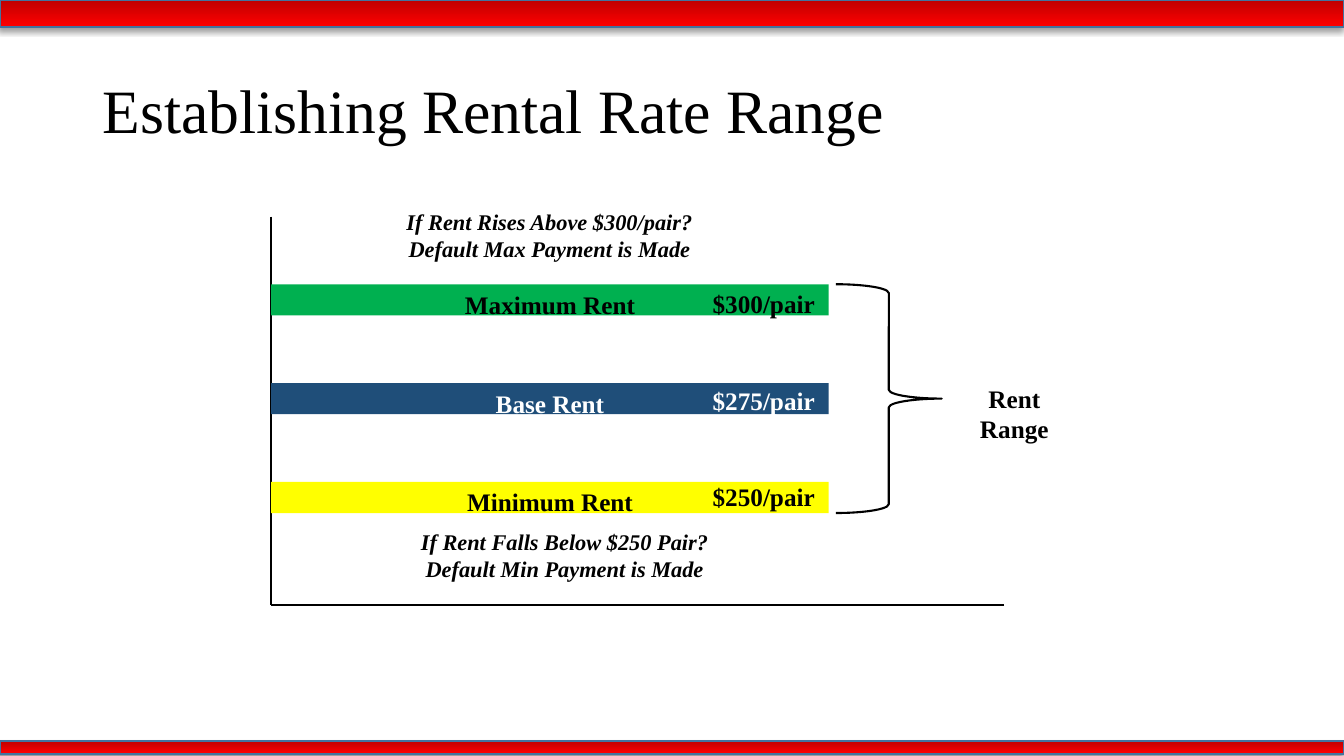
"""Build the rental rate range slide."""
from dataclasses import dataclass

from lxml.etree import SubElement
from pptx import Presentation
from pptx.dml.color import RGBColor
from pptx.enum.shapes import MSO_CONNECTOR, MSO_SHAPE
from pptx.enum.text import MSO_ANCHOR, PP_ALIGN
from pptx.oxml.ns import qn
from pptx.util import Inches, Pt


@dataclass(frozen=True)
class Theme:
    """Colours, font and type sizes of the slide."""
    font: str = "Times New Roman"
    black: str = "000000"
    white: str = "FFFFFF"
    dark_red: str = "C00000"
    red: str = "FF0000"
    band_edge: str = "43739E"
    green: str = "00B050"
    navy: str = "1F4E79"
    yellow: str = "FFFF00"
    title_size: int = 44
    label_size: int = 18
    note_size: int = 16
    line_width: float = 1.5


THEME = Theme()
SLIDE_WIDTH, SLIDE_HEIGHT = 13.33, 7.5
AXIS_LEFT, AXIS_TOP, AXIS_RIGHT, AXIS_BOTTOM = 2.69, 2.15, 9.96, 6
BAR_TOP, BAR_STEP, BAR_WIDTH, BAR_HEIGHT = 2.82, 0.98, 5.53, 0.31
PRICE_TOP, PRICE_STEP = 2.81, 0.96
RENTS = [
    ("Maximum Rent", "$300/pair", THEME.green, THEME.black),
    ("Base Rent", "$275/pair", THEME.navy, THEME.white),
    ("Minimum Rent", "$250/pair", THEME.yellow, THEME.black),
]


def rgb(code):
    """Turn a hex code into a colour."""
    return RGBColor.from_string(code)


def apply(target, values):
    """Set each named format value on the target."""
    for name, value in values.items():
        setattr(target, name, value)


def write(frame, lines, size, color=THEME.black, align=PP_ALIGN.CENTER,
          anchor=MSO_ANCHOR.TOP, spacing=None, bold=True, italic=False):
    """Fill a text frame with one paragraph per line."""
    apply(frame, {"word_wrap": True, "vertical_anchor": anchor})
    for index, line in enumerate(lines):
        paragraph = frame.add_paragraph() if index else frame.paragraphs[0]
        apply(paragraph, {"alignment": align, "line_spacing": spacing})
        run = paragraph.add_run()
        run.text = line
        apply(run.font, {"name": THEME.font, "size": Pt(size),
                         "bold": bold, "italic": italic})
        run.font.color.rgb = rgb(color)


def add_text(slide, box, lines, size, **style):
    """Add a text box."""
    label = slide.shapes.add_textbox(*map(Inches, box))
    write(label.text_frame, lines, size, **style)


def add_plain(slide, preset, box):
    """Add a preset shape without a shadow."""
    shape = slide.shapes.add_shape(preset, *map(Inches, box))
    shape.shadow.inherit = False
    return shape


def add_stroke(line, color, width):
    """Colour a line and set its width."""
    line.color.rgb = rgb(color)
    line.width = Pt(width)


def add_band(slide, top, height):
    """Add a red gradient band across the slide with a soft shadow."""
    band = add_plain(slide, MSO_SHAPE.RECTANGLE, (0, top, SLIDE_WIDTH, height))
    band.fill.gradient()
    band.fill.gradient_angle = 270
    for stop, color, position in zip(band.fill.gradient_stops,
                                     (THEME.dark_red, THEME.red), (0, 1)):
        stop.color.rgb = rgb(color)
        stop.position = position
    add_stroke(band.line, THEME.band_edge, 1)
    effects = band._element.spPr.find(qn("a:effectLst"))
    shadow = SubElement(effects, qn("a:outerShdw"), blurRad=str(Pt(4)),
                        dist=str(Pt(3)), dir="8100000", algn="tr",
                        rotWithShape="0")
    tint = SubElement(shadow, qn("a:srgbClr"), val=THEME.black)
    SubElement(tint, qn("a:alpha"), val="40000")


def add_axis(slide, start, end):
    """Add one axis line."""
    axis = slide.shapes.add_connector(MSO_CONNECTOR.STRAIGHT,
                                      *map(Inches, (*start, *end)))
    add_stroke(axis.line, THEME.black, THEME.line_width)
    SubElement(axis._element.spPr, qn("a:effectLst"))


def add_bar(slide, top, name, fill, color):
    """Add a coloured rent bar with its name."""
    bar = add_plain(slide, MSO_SHAPE.RECTANGLE,
                    (AXIS_LEFT, top, BAR_WIDTH, BAR_HEIGHT))
    bar.fill.solid()
    bar.fill.fore_color.rgb = rgb(fill)
    bar.line.fill.background()
    write(bar.text_frame, [name], THEME.label_size, color=color)


def add_range_brace(slide):
    """Add the brace that spans all bars, with its label."""
    height = BAR_STEP * (len(RENTS) - 1) + BAR_HEIGHT
    brace = add_plain(slide, MSO_SHAPE.RIGHT_BRACE,
                      (8.29, BAR_TOP, 1.05, height))
    brace.fill.background()
    add_stroke(brace.line, THEME.black, THEME.line_width)
    add_text(slide, (9.34, 3.75, 1.44, 0.71), ["Rent Range"], THEME.label_size)


def main():
    """Build and save the slide."""
    deck = Presentation()
    apply(deck, {"slide_width": Inches(SLIDE_WIDTH),
                 "slide_height": Inches(SLIDE_HEIGHT)})
    slide = deck.slides.add_slide(deck.slide_layouts[6])
    add_band(slide, 0, 0.27)
    add_band(slide, 7.35, 0.13)
    add_text(slide, (0.92, 0.4, 11.5, 1.45), ["Establishing Rental Rate Range"],
             THEME.title_size, align=PP_ALIGN.LEFT, anchor=MSO_ANCHOR.MIDDLE,
             spacing=0.9, bold=False)
    origin = (AXIS_LEFT, AXIS_BOTTOM)
    add_axis(slide, (AXIS_LEFT, AXIS_TOP), origin)
    add_axis(slide, (AXIS_RIGHT, AXIS_BOTTOM), origin)
    for row, (name, price, fill, color) in enumerate(RENTS):
        add_bar(slide, BAR_TOP + row * BAR_STEP, name, fill, color)
        add_text(slide, (6.93, PRICE_TOP + row * PRICE_STEP, 1.29, 0.4),
                 [price], THEME.label_size, color=color)
    add_range_brace(slide)
    add_text(slide, (2.83, 2.02, 5.24, 0.64),
             ["If Rent Rises Above $300/pair?", "Default Max Payment is Made"],
             THEME.note_size, italic=True)
    add_text(slide, (2.98, 5.19, 5.24, 0.64),
             ["If Rent Falls Below $250 Pair?", "Default Min Payment is Made"],
             THEME.note_size, italic=True)
    deck.save("out.pptx")


if __name__ == "__main__":
    main()
